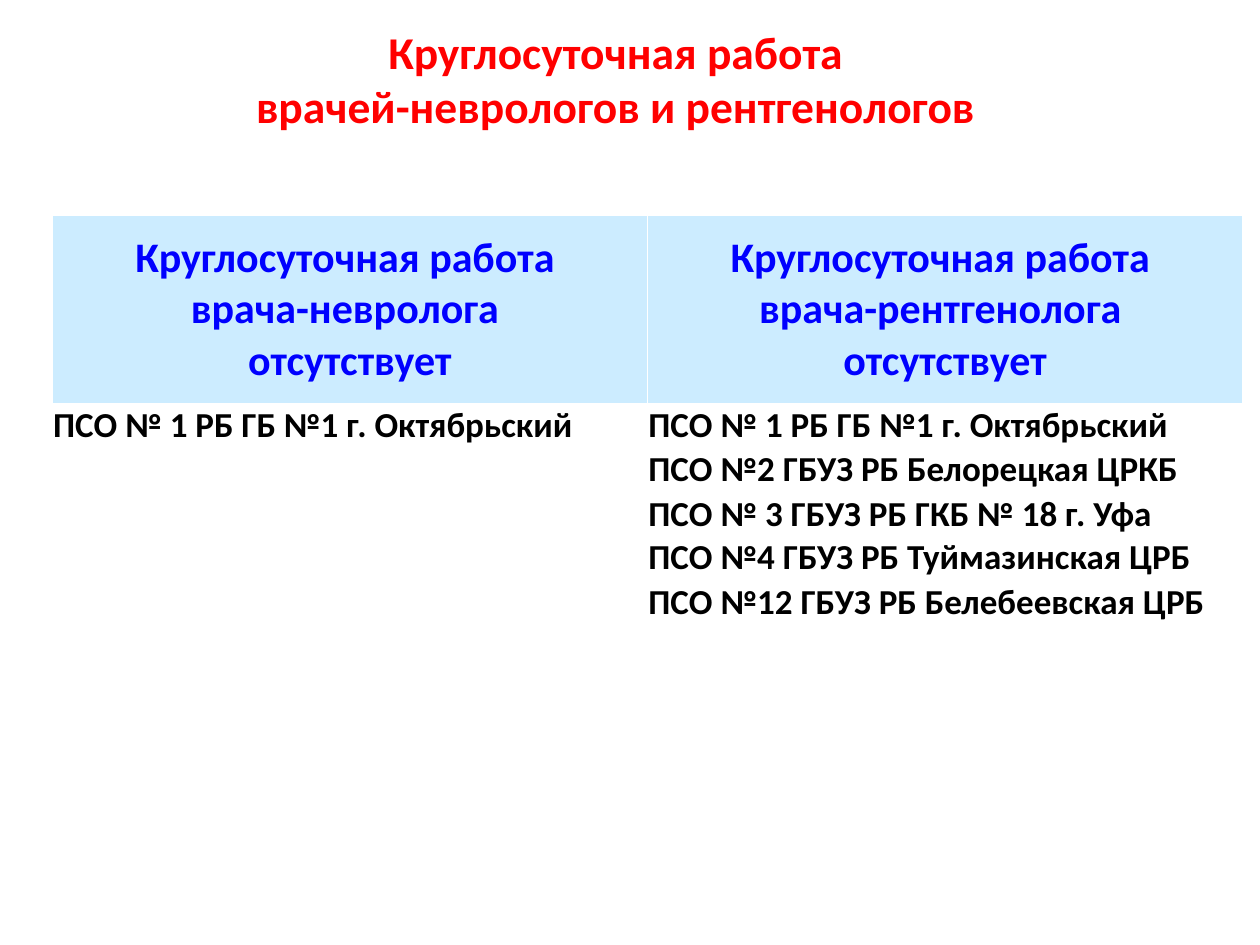
from pptx import Presentation
from pptx.dml.color import RGBColor
from pptx.enum.text import MSO_ANCHOR, MSO_AUTO_SIZE, PP_ALIGN
from pptx.util import Cm, Pt

TITLE = ["Круглосуточная работа ", "врачей-неврологов и рентгенологов "]
HEADS = [
    ["Круглосуточная работа ", "врача-невролога ", "отсутствует"],
    ["Круглосуточная работа ", "врача-рентгенолога ", "отсутствует"],
]
ROWS = [
    [["ПСО № 1 РБ ГБ №1 г. Октябрьский"], ["ПСО № 1 РБ ГБ №1 г. Октябрьский"]],
    [[], ["ПСО №2 ГБУЗ РБ Белорецкая ЦРКБ"]],
    [[], ["ПСО № 3 ГБУЗ РБ ГКБ № 18 г. Уфа",
          "ПСО №4 ГБУЗ РБ Туймазинская ЦРБ"]],
    [[], ["ПСО №12 ГБУЗ РБ Белебеевская ЦРБ"]],
]
HEAD_H, LINE_H, COL_W = 3.8, 0.89, 12


def paint(item, color):
    item.fill.solid()
    item.fill.fore_color.rgb = RGBColor.from_string(color)


def write(frame, lines, size, color, align):
    frame.text = "\n".join(lines)
    for para in frame.paragraphs:
        para.alignment = align
        font = para.font
        font.name, font.size, font.bold = "Calibri", Pt(size), True
        font.color.rgb = RGBColor.from_string(color)


def fill_cell(cell, lines, size, color, align, back):
    cell.margin_left = cell.margin_right = cell.margin_top = Cm(0.02)
    cell.margin_bottom = 0
    cell.vertical_anchor = MSO_ANCHOR.MIDDLE
    paint(cell, back)
    write(cell.text_frame, lines, size, color, align)


deck = Presentation()
deck.slide_width, deck.slide_height = Cm(25.4), Cm(19.05)
slide = deck.slides.add_slide(deck.slide_layouts[5])

title = slide.shapes.title
title.left, title.top, title.width, title.height = Cm(0), Cm(0.33), Cm(25.04), Cm(2.5)
paint(title, "FFFFFF")
title.text_frame.auto_size = MSO_AUTO_SIZE.NONE
title.text_frame.vertical_anchor = MSO_ANCHOR.MIDDLE
write(title.text_frame, TITLE, 26, "FF0000", PP_ALIGN.CENTER)

heights = [HEAD_H] + [LINE_H * max(map(len, row)) for row in ROWS]
table = slide.shapes.add_table(
    len(heights), len(HEADS), Cm(1.05), Cm(4.33),
    Cm(COL_W * len(HEADS)), Cm(sum(heights))).table
for col in table.columns:
    col.width = Cm(COL_W)
for row, high in zip(table.rows, heights):
    row.height = Cm(high)

for c, lines in enumerate(HEADS):
    fill_cell(table.cell(0, c), lines, 24, "0000FF", PP_ALIGN.CENTER, "CCECFF")
for r, row in enumerate(ROWS, 1):
    for c, lines in enumerate(row):
        fill_cell(table.cell(r, c), lines, 20, "000000", PP_ALIGN.LEFT, "FFFFFF")

deck.save("out.pptx")
